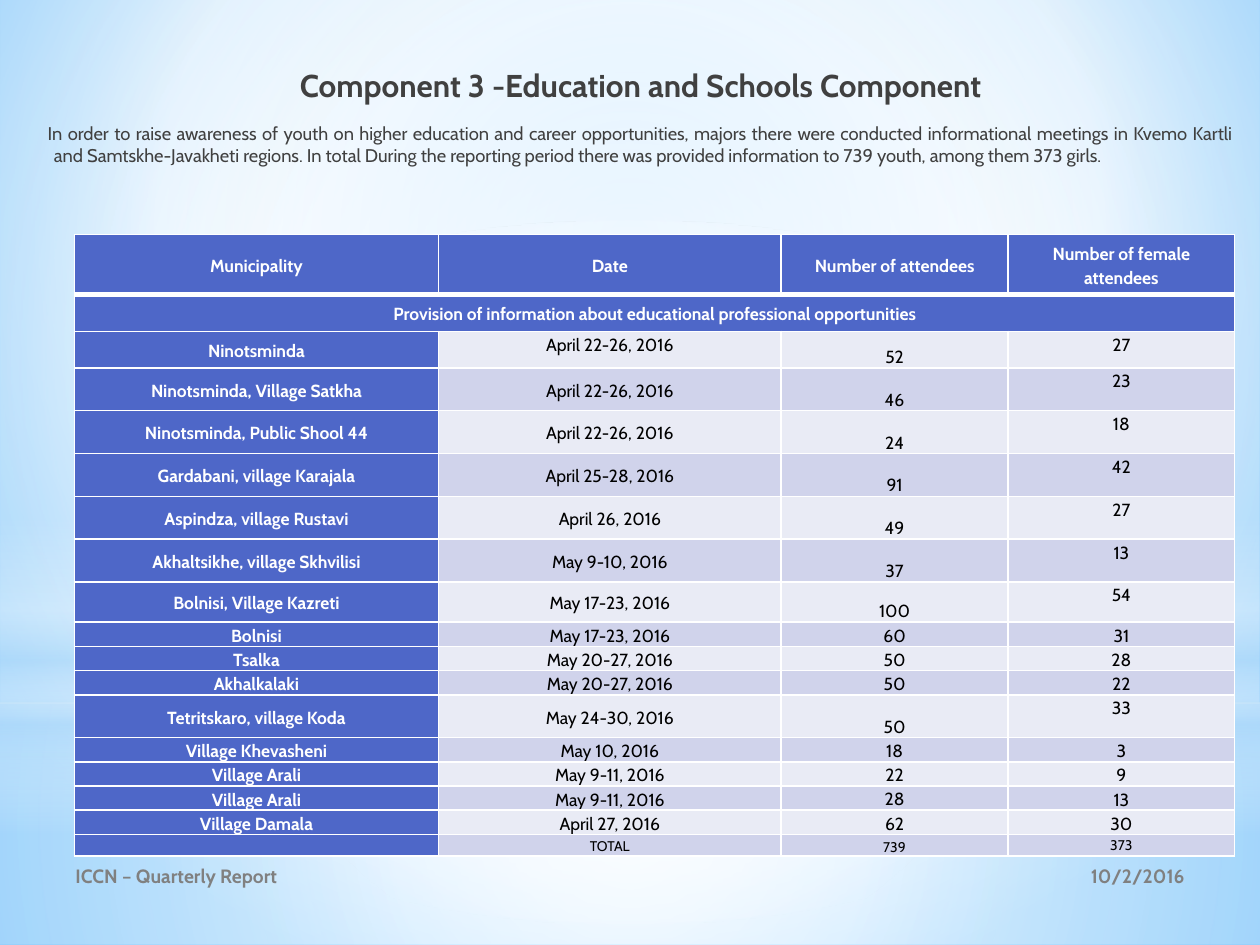
from lxml import etree
from pptx import Presentation
from pptx import util as u
from pptx.dml.color import RGBColor
from pptx.enum import shapes, text
from pptx.oxml.ns import qn

COLORS = {
    "white": "FFFFFF", "ink": "404040", "grey": "808080", "black": "000000",
    "head": "4E67C8", "light": "E9EBF5", "dark": "D0D3EB",
    "sky": "9ED5FF", "blue": "5BB9FF", "pale": "B4DCFA",
}
FONT = "Cabin"
MIDDLE, TOP, BOTTOM = text.MSO_ANCHOR.MIDDLE, text.MSO_ANCHOR.TOP, text.MSO_ANCHOR.BOTTOM
CENTER = text.PP_ALIGN.CENTER
MIDPOINT = (50, 50, 50, 50)

TITLE = "Component 3 -Education and Schools Component"
INTRO = (
    "In order to raise awareness of youth on higher education and career opportunities, "
    "majors there were conducted informational meetings in Kvemo Kartli and "
    "Samtskhe-Javakheti regions. In total During the reporting period there was provided "
    "information to 739 youth, among them 373 girls."
)
HEADERS = ("Municipality", "Date", "Number of attendees", "Number of female attendees")
SECTION = "Provision of information about educational professional opportunities"
MEETINGS = [
    ("Ninotsminda", "April 22-26, 2016", 52, 27, 0.29),
    ("Ninotsminda, Village Satkha", "April 22-26, 2016", 46, 23, 0.34),
    ("Ninotsminda, Public Shool 44", "April 22-26, 2016", 24, 18, 0.34),
    ("Gardabani, village Karajala", "April 25-28, 2016", 91, 42, 0.34),
    ("Aspindza, village Rustavi", "April 26, 2016", 49, 27, 0.34),
    ("Akhaltsikhe, village Skhvilisi", "May 9-10, 2016", 37, 13, 0.34),
    ("Bolnisi, Village Kazreti", "May 17-23, 2016", 100, 54, 0.32),
    ("Bolnisi", "May 17-23, 2016", 60, 31, 0.17),
    ("Tsalka", "May 20-27, 2016", 50, 28, 0.17),
    ("Akhalkalaki", "May 20-27, 2016", 50, 22, 0.17),
    ("Tetritskaro, village Koda", "May 24-30, 2016", 50, 33, 0.34),
    ("Village Khevasheni", "May 10, 2016", 18, 3, 0.17),
    ("Village Arali", "May 9-11, 2016", 22, 9, 0.17),
    ("Village Arali", "May 9-11, 2016", 28, 13, 0.17),
    ("Village Damala", "April 27, 2016", 62, 30, 0.17),
    ("", "TOTAL", 739, 373, 0.17),
]
COLUMN_WIDTHS = (2.89, 2.72, 1.8, 1.8)


def inches(box):
    return [u.Inches(value) for value in box]


def style(para, size, color, bold=False, align=CENTER):
    para.alignment = align
    para.font.name = FONT
    para.font.size = u.Pt(size)
    para.font.bold = bold
    para.font.color.rgb = RGBColor.from_string(COLORS[color])


def set_gradient(parent, stops, focus=None):
    gradient = etree.Element(qn("a:gradFill"), rotWithShape="1")
    stop_list = etree.SubElement(gradient, qn("a:gsLst"))
    for position, color, opacity in stops:
        stop = etree.SubElement(stop_list, qn("a:gs"), pos=str(position * 1000))
        tint = etree.SubElement(stop, qn("a:srgbClr"), val=COLORS[color])
        if opacity < 100:
            etree.SubElement(tint, qn("a:alpha"), val=str(opacity * 1000))
    if focus:
        path = etree.SubElement(gradient, qn("a:path"), path="circle")
        edges = {side: str(value * 1000) for side, value in zip("ltrb", focus)}
        etree.SubElement(path, qn("a:fillToRect"), **edges)
    else:
        etree.SubElement(gradient, qn("a:lin"), ang="5400000", scaled="0")
    parent.replace(parent.find(qn("a:solidFill")), gradient)


def add_glow(page, box, kind, stops, focus=None):
    glow = page.shapes.add_shape(kind, *inches(box))
    glow.shadow.inherit = False
    glow.line.fill.background()
    glow.fill.solid()
    set_gradient(glow._element.spPr, stops, focus)


def add_backdrop(page):
    page.background.fill.solid()
    set_gradient(page._element.find(".//" + qn("p:bgPr")),
                 [(0, "sky", 100), (60, "white", 100), (100, "blue", 100)], (20, 10, 20, 60))
    rectangle, oval = shapes.MSO_SHAPE.RECTANGLE, shapes.MSO_SHAPE.OVAL
    add_glow(page, (0, 5.58, 10, 1.92), rectangle,
             [(0, "white", 91), (37, "white", 76), (100, "pale", 79)], MIDPOINT)
    add_glow(page, (0, 0, 10, 5.58), rectangle,
             [(0, "white", 89), (48, "white", 62), (100, "pale", 79)], MIDPOINT)
    add_glow(page, (0, 4.12, 10, 2.5), rectangle,
             [(0, "white", 0), (29, "white", 30), (45, "pale", 40),
              (55, "white", 26), (65, "pale", 60), (100, "white", 0)])
    add_glow(page, (0, 1.75, 10, 5.58), oval,
             [(0, "white", 100), (56, "white", 0)], MIDPOINT)


def add_title(page, box):
    title = page.shapes.title
    title.left, title.top, title.width, title.height = inches(box)
    title.text_frame.text = TITLE
    title.text_frame.vertical_anchor = MIDDLE
    style(title.text_frame.paragraphs[0], 18, "ink", True)
    page.shapes._spTree.append(title._element)


def add_text(page, box, words, size, color, bold, align, anchor=MIDDLE):
    frame = page.shapes.add_textbox(*inches(box)).text_frame
    frame.word_wrap = True
    frame.vertical_anchor = anchor
    para = frame.paragraphs[0]
    para.text = words
    style(para, size, color, bold, align)
    return para


def add_intro(page, box):
    para = add_text(page, box, INTRO, 10.5, "ink", False, text.PP_ALIGN.JUSTIFY, TOP)
    properties = para._p.get_or_add_pPr()
    properties.set("marL", str(u.Inches(0.05)))
    properties.set("indent", str(u.Inches(-0.05)))


def set_borders(cell, top=1, bottom=1):
    properties = cell._tc.get_or_add_tcPr()
    widths = {"L": 1, "R": 1, "T": top, "B": bottom}
    for index, (side, width) in enumerate(widths.items()):
        line = etree.Element(qn("a:ln" + side), w=str(u.Pt(width)))
        fill = etree.SubElement(line, qn("a:solidFill"))
        etree.SubElement(fill, qn("a:srgbClr"), val=COLORS["white"])
        properties.insert(index, line)


def fill_cell(cell, words, fill, color, bold, anchor=MIDDLE, size=10):
    cell.fill.solid()
    cell.fill.fore_color.rgb = RGBColor.from_string(COLORS[fill])
    cell.margin_left = cell.margin_right = u.Inches(0.05)
    cell.margin_top = cell.margin_bottom = 0
    cell.vertical_anchor = anchor
    para = cell.text_frame.paragraphs[0]
    para.text = str(words)
    para.line_spacing = 1.15
    style(para, size, color, bold)
    if not words:
        etree.SubElement(para._p, qn("a:endParaRPr"), sz=str(size * 100))


def add_meetings_table(page, box):
    heights = [0.48, 0.29] + [meeting[-1] for meeting in MEETINGS]
    table = page.shapes.add_table(len(heights), len(HEADERS), *inches(box)).table
    for column, width in zip(table.columns, COLUMN_WIDTHS):
        column.width = u.Inches(width)
    for row, height in zip(table.rows, heights):
        row.height = u.Inches(height)

    for index, words in enumerate(HEADERS):
        fill_cell(table.cell(0, index), words, "head", "white", True)
        set_borders(table.cell(0, index), bottom=3)
        set_borders(table.cell(1, index), top=3)
    table.cell(1, 0).merge(table.cell(1, len(HEADERS) - 1))
    fill_cell(table.cell(1, 0), SECTION, "head", "white", True)

    for number, meeting in enumerate(MEETINGS):
        size = 8 if meeting[1] == "TOTAL" else 10
        date_anchor = TOP if number == 0 else MIDDLE
        anchors = (MIDDLE, date_anchor, BOTTOM, TOP)
        for index, (words, anchor) in enumerate(zip(meeting, anchors)):
            cell = table.cell(number + 2, index)
            if index == 0:
                fill_cell(cell, words, "head", "white", True, anchor, size)
            else:
                band = "dark" if number % 2 else "light"
                fill_cell(cell, words, band, "black", False, anchor, size)
            set_borders(cell)


def main():
    deck = Presentation()
    deck.slide_width, deck.slide_height = u.Inches(10), u.Inches(7.5)
    page = deck.slides.add_slide(deck.slide_layouts[5])
    add_backdrop(page)
    add_text(page, (0.5, 6.75, 3.67, 0.4), "ICCN – Quarterly Report",
             11, "grey", True, text.PP_ALIGN.LEFT)
    add_title(page, (0.28, 0.4, 9.61, 0.55))
    add_intro(page, (0.28, 0.92, 9.61, 0.5))
    add_meetings_table(page, (0.59, 1.86, 9.21, 4.95))
    add_text(page, (6.75, 6.75, 2.75, 0.4), "10/2/2016",
             11, "grey", True, text.PP_ALIGN.RIGHT)
    deck.save("out.pptx")


if __name__ == "__main__":
    main()
